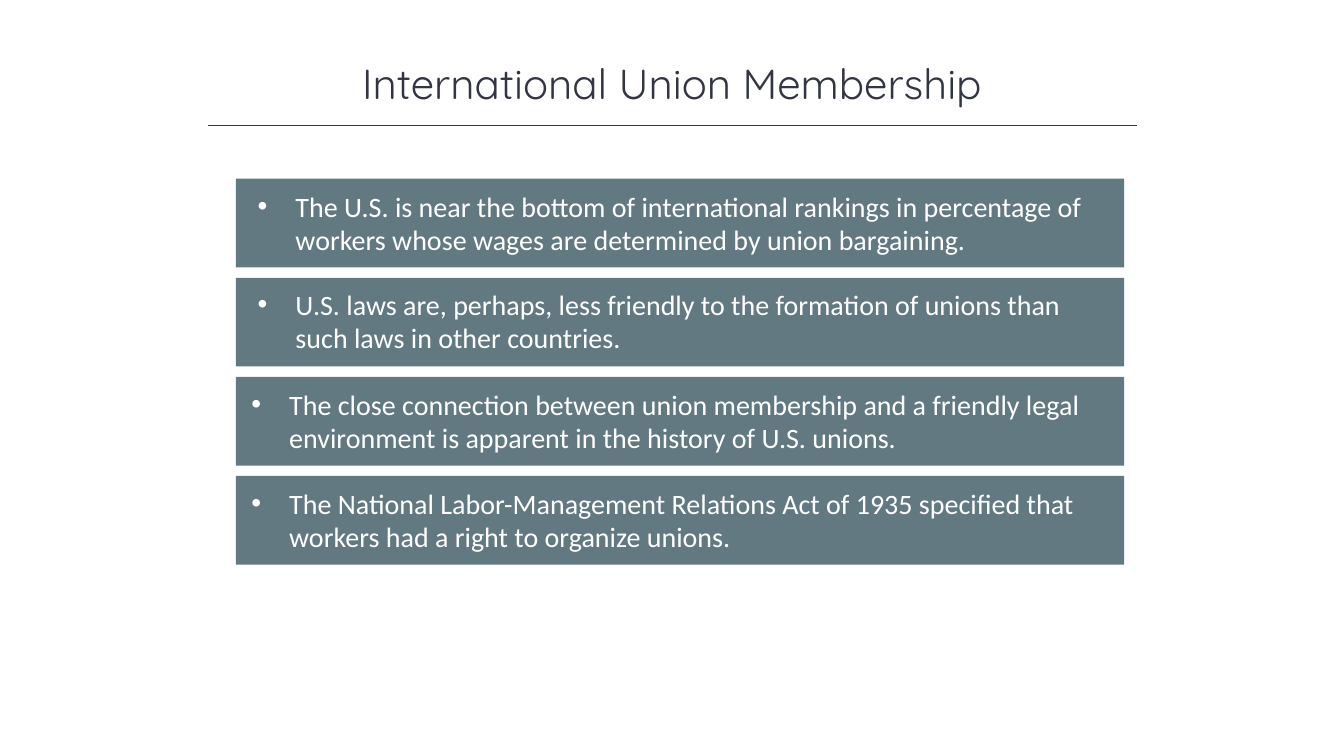
from lxml import etree
from pptx import Presentation
from pptx.dml.color import RGBColor
from pptx.enum import shapes, text
from pptx.oxml import ns
from pptx.util import Pt

INK, SLATE, WHITE = "323542", "627981", "FFFFFF"


def rgb(code):
    return RGBColor.from_string(code)


def write(sp, content, size, font, color, align=text.PP_ALIGN.LEFT, bullet=None, indent=0):
    tf = sp.text_frame
    tf.word_wrap = True
    tf.vertical_anchor = text.MSO_ANCHOR.TOP
    p = tf.paragraphs[0]
    p.alignment = align
    if bullet:
        pPr = p._p.get_or_add_pPr()
        pPr.set("marL", str(Pt(indent)))
        pPr.set("indent", str(-Pt(indent)))
        etree.SubElement(pPr, ns.qn("a:buFont")).set("typeface", "Arial")
        etree.SubElement(pPr, ns.qn("a:buChar")).set("char", bullet)
    r = p.add_run()
    r.text = content
    r.font.size = Pt(size)
    r.font.name = font
    r.font.color.rgb = rgb(color)


prs = Presentation()
prs.slide_width, prs.slide_height = Pt(960), Pt(540)
s = prs.slides.add_slide(prs.slide_layouts[6])

# Title
title = s.shapes.add_textbox(Pt(120), Pt(37.5), Pt(720), Pt(44))
write(title, "International Union Membership", 30, "Quicksand", INK, align=text.PP_ALIGN.CENTER)

# Rule under the title
rule = s.shapes.add_connector(shapes.MSO_CONNECTOR.STRAIGHT, Pt(148.5), Pt(89.5), Pt(812.5), Pt(89.5))
rule.line.color.rgb = rgb(INK)
rule.line.width = Pt(1)
etree.SubElement(rule._element.spPr, ns.qn("a:effectLst"))

# Bars, each grouped with its bullet: text left, text top, wording
bars = [
    (177, 131.7, "The U.S. is near the bottom of international rankings in percentage of workers whose wages are determined by union bargaining."),
    (177, 201.6, "U.S. laws are, perhaps, less friendly to the formation of unions than such laws in other countries."),
    (172.5, 273, "The close connection between union membership and a friendly legal environment is apparent in the history of U.S. unions."),
    (172.5, 343.8, "The National Labor-Management Relations Act of 1935 specified that workers had a right to organize unions."),
]
for i, (left, top, wording) in enumerate(bars):
    group = s.shapes.add_group_shape()
    boxes = [(168.5, 127.6 + 70.8 * i, 634.5, 63.4), (left, top, 615, 55.6)]
    for box in boxes:
        sp = group.shapes.add_shape(shapes.MSO_SHAPE.RECTANGLE, *map(Pt, box))
        sp.shadow.inherit = False
        sp.fill.solid()
        sp.fill.fore_color.rgb = rgb(SLATE)
        sp.line.fill.background()
    write(sp, wording, 20, "Calibri", WHITE, bullet="•", indent=27)

prs.save("out.pptx")
